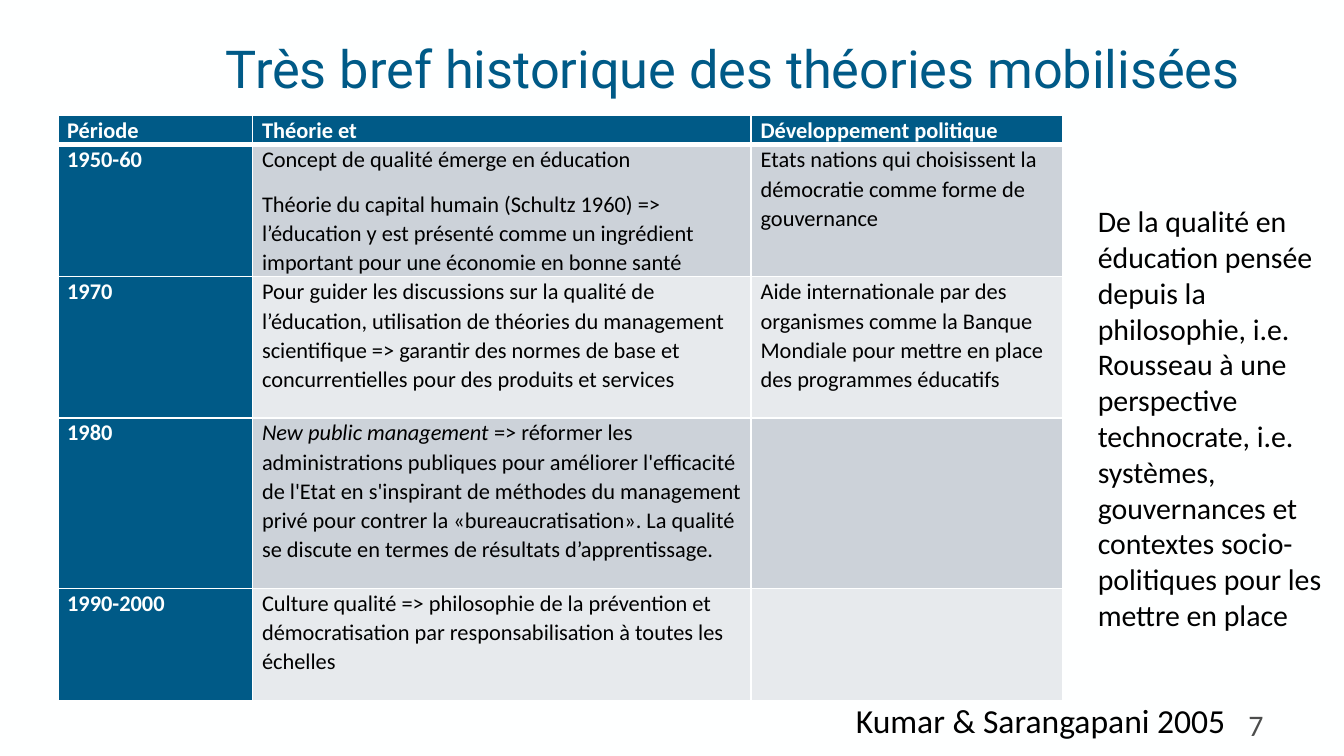
from lxml import etree
from pptx import Presentation
from pptx.dml.color import RGBColor
from pptx.enum.text import MSO_ANCHOR, MSO_AUTO_SIZE, PP_ALIGN
from pptx.oxml.ns import qn
from pptx.util import Inches, Pt

WHITE = RGBColor(0xFE, 0xFF, 0xFF)
BLACK = RGBColor(0, 0, 0)
BLUE = RGBColor(0x00, 0x5A, 0x87)
GREY = RGBColor(0x4C, 0x4D, 0x4C)
BANDS = (RGBColor(0xCC, 0xD2, 0xD9), RGBColor(0xE7, 0xEA, 0xED))
LEFT, RIGHT = PP_ALIGN.LEFT, PP_ALIGN.RIGHT
MIDDLE = MSO_ANCHOR.MIDDLE
NO_AUTOFIT, GROW = MSO_AUTO_SIZE.NONE, MSO_AUTO_SIZE.SHAPE_TO_FIT_TEXT

COLUMN_WIDTHS = (1.45, 3.71, 2.32)
ROW_HEIGHTS = (0.2, 0.97, 1.05, 1.27, 0.84)

# Each cell is a list of paragraphs, each paragraph a list of (text, italic) runs.
ROWS = [
    [[[("Période", False)]], [[("Théorie et", False)]], [[("Développement politique", False)]]],
    [
        [[("1950-60", False)]],
        [
            [("Concept de qualité émerge en éducation", False)],
            [("Théorie du capital humain (Schultz 1960) => l’éducation y est présenté "
              "comme un ingrédient important pour une économie en bonne santé", False)],
        ],
        [[("Etats nations qui choisissent la démocratie comme forme de gouvernance", False)]],
    ],
    [
        [[("1970", False)]],
        [[("Pour guider les discussions sur la qualité de l’éducation, utilisation de "
           "théories du management scientifique => garantir des normes de base et "
           "concurrentielles pour des produits et services", False)]],
        [[("Aide internationale par des organismes comme la Banque Mondiale pour mettre "
           "en place des programmes éducatifs", False)]],
    ],
    [
        [[("1980", False)]],
        [[("New public management ", True),
          ("=> réformer les administrations publiques pour améliorer l'efficacité de "
           "l'Etat en s'inspirant de méthodes du management privé pour contrer la "
           "«bureaucratisation». La qualité se discute en termes de résultats "
           "d’apprentissage.", False)]],
        [],
    ],
    [
        [[("1990-2000", False)]],
        [[("Culture qualité => philosophie de la prévention et démocratisation par "
           "responsabilisation à toutes les échelles", False)]],
        [],
    ],
]


class SlideBuilder:
    def __init__(self, presentation, font="Calibri"):
        self.font = font
        self.slide = presentation.slides.add_slide(presentation.slide_layouts[5])
        background = self.slide.background.fill
        background.solid()
        background.fore_color.rgb = WHITE

    def add_run(self, paragraph, text, size, color, bold=False, italic=False, font=None):
        run = paragraph.add_run()
        run.text = text
        run.font.name = font or self.font
        run.font.size = Pt(size)
        run.font.bold = bold
        run.font.italic = italic
        run.font.color.rgb = color

    def add_title(self, text, left, top, width, height):
        title = self.slide.shapes.title
        title.left, title.top = Inches(left), Inches(top)
        title.width, title.height = Inches(width), Inches(height)
        frame = title.text_frame
        frame.auto_size = NO_AUTOFIT
        frame.vertical_anchor = MIDDLE
        frame.margin_left = frame.margin_right = Inches(0.07)
        frame.margin_top = frame.margin_bottom = Inches(0.04)
        paragraph = frame.paragraphs[0]
        paragraph.alignment = RIGHT
        self.add_run(paragraph, text, 28, BLUE, font="Roboto")

    def add_text(self, text, left, top, width, height, size, color=BLACK,
                 align=LEFT, wrap=True, auto_size=GROW):
        box = self.slide.shapes.add_textbox(
            Inches(left), Inches(top), Inches(width), Inches(height))
        frame = box.text_frame
        frame.word_wrap = wrap
        frame.auto_size = auto_size
        paragraph = frame.paragraphs[0]
        paragraph.alignment = align
        self.add_run(paragraph, text, size, color)

    def add_table(self, rows, left, top, widths, heights):
        table = self.slide.shapes.add_table(
            len(rows), len(widths), Inches(left), Inches(top),
            Inches(sum(widths)), Inches(sum(heights))).table
        for column, width in zip(table.columns, widths):
            column.width = Inches(width)
        for row, height in zip(table.rows, heights):
            row.height = Inches(height)
        for row_index, row in enumerate(rows):
            for column_index, paragraphs in enumerate(row):
                heading = row_index == 0 or column_index == 0
                cell = table.cell(row_index, column_index)
                cell.fill.solid()
                cell.fill.fore_color.rgb = BLUE if heading else BANDS[(row_index - 1) % 2]
                self.write_cell(cell, paragraphs, heading)
                self.set_borders(cell, top=3 if row_index == 1 else 1,
                                 bottom=3 if row_index == 0 else 1)

    def write_cell(self, cell, paragraphs, heading):
        cell.margin_left = cell.margin_right = Inches(0.07)
        cell.margin_top = cell.margin_bottom = 0
        frame = cell.text_frame
        for index, runs in enumerate(paragraphs):
            paragraph = frame.add_paragraph() if index else frame.paragraphs[0]
            paragraph.line_spacing = 1.07
            paragraph.space_after = Pt(8)
            for text, italic in runs:
                self.add_run(paragraph, text, 12, WHITE if heading else BLACK, heading, italic)

    def set_borders(self, cell, top, bottom):
        """Insert the border lines ahead of the fill, as the schema requires."""
        properties = cell._tc.get_or_add_tcPr()
        borders = (("a:lnL", 1), ("a:lnR", 1), ("a:lnT", top), ("a:lnB", bottom))
        for index, (tag, width) in enumerate(borders):
            line = etree.Element(qn(tag), w=str(Pt(width)))
            fill = etree.SubElement(line, qn("a:solidFill"))
            etree.SubElement(fill, qn("a:srgbClr"), val=str(WHITE))
            properties.insert(index, line)


def main():
    presentation = Presentation()
    presentation.slide_width = Inches(10)
    presentation.slide_height = Inches(10 * 9 / 16)

    builder = SlideBuilder(presentation)
    builder.add_text("7", 7.17, 5.21, 2.33, 0.3, 16, GREY, RIGHT, auto_size=NO_AUTOFIT)
    builder.add_title("Très bref historique des théories mobilisées ", 0.98, 0.21, 8.41, 0.59)
    builder.add_table(ROWS, 0.43, 0.86, COLUMN_WIDTHS, ROW_HEIGHTS)
    builder.add_text("Kumar & Sarangapani 2005", 6.27, 5.16, 2.98, 0.4, 18, wrap=False)
    builder.add_text(
        "De la qualité en éducation pensée depuis la philosophie, i.e. Rousseau à une "
        "perspective technocrate, i.e. systèmes, gouvernances et contextes "
        "socio-politiques pour les mettre en place", 8.07, 1.46, 1.89, 3.33, 16)

    presentation.save("out.pptx")


if __name__ == "__main__":
    main()
